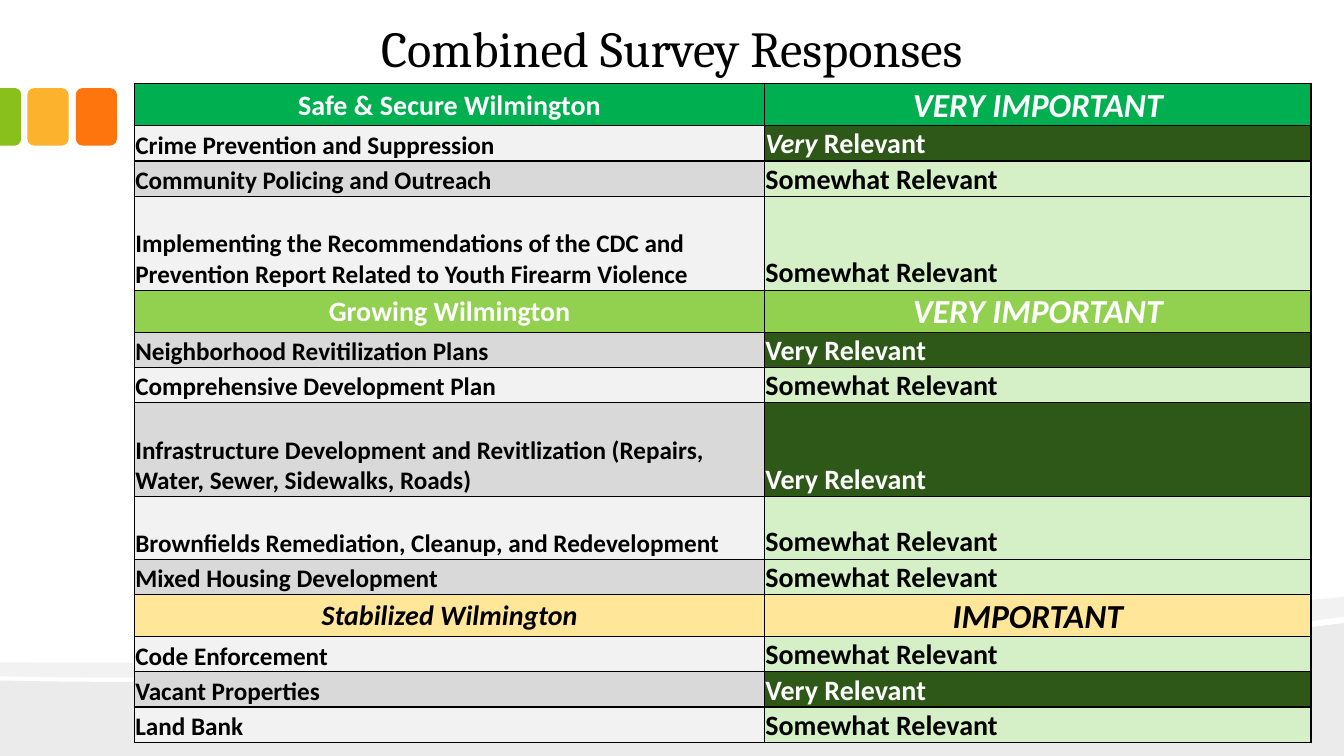
from pptx import Presentation
from pptx.dml.color import RGBColor
from pptx.enum.shapes import MSO_SHAPE
from pptx.enum.text import MSO_ANCHOR, PP_ALIGN
from pptx.oxml import parse_xml
from pptx.oxml.ns import nsdecls, qn
from pptx.util import Cm, Pt
from lxml.etree import SubElement

BLACK = RGBColor(0x00, 0x00, 0x00)
WHITE = RGBColor(0xFF, 0xFF, 0xFF)
GREEN = RGBColor(0x00, 0xB0, 0x50)
LIME = RGBColor(0x92, 0xD0, 0x50)
CREAM = RGBColor(0xFF, 0xE6, 0x99)
DARK_GREEN = RGBColor(0x2E, 0x58, 0x18)
PALE_GREEN = RGBColor(0xD5, 0xEF, 0xC6)
STRIPES = (RGBColor(0xF2, 0xF2, 0xF2), RGBColor(0xD9, 0xD9, 0xD9))
LEAF = RGBColor(0x89, 0xC0, 0x1C)
AMBER = RGBColor(0xFC, 0xB2, 0x2C)
ORANGE = RGBColor(0xFE, 0x75, 0x0E)

COLUMN_WIDTHS = (15.88, 13.77)
HEADING_HEIGHT, ITEM_HEIGHT = 0.86, 0.84
VERY = [("Very Relevant", False)]
VERY_STRESSED = [("Very ", True), ("Relevant", False)]
SOMEWHAT = [("Somewhat Relevant", False)]
RATING_COLORS = {"Very": (DARK_GREEN, WHITE), "Some": (PALE_GREEN, BLACK)}

SECTIONS = [
    ("Safe & Secure Wilmington", False, "VERY IMPORTANT", GREEN, WHITE, [
        ("Crime Prevention and Suppression", VERY_STRESSED, ITEM_HEIGHT),
        ("Community Policing and Outreach", SOMEWHAT, ITEM_HEIGHT),
        ("Implementing the Recommendations of the CDC and Prevention Report "
         "Related to Youth Firearm Violence", SOMEWHAT, 2.37),
    ]),
    ("Growing Wilmington", False, "VERY IMPORTANT", LIME, WHITE, [
        ("Neighborhood Revitilization Plans", VERY, ITEM_HEIGHT),
        ("Comprehensive Development Plan", SOMEWHAT, ITEM_HEIGHT),
        ("Infrastructure Development and Revitlization (Repairs, Water, "
         "Sewer, Sidewalks, Roads)", VERY, 2.37),
        ("Brownfields Remediation, Cleanup, and Redevelopment", SOMEWHAT, 1.58),
        ("Mixed Housing Development", SOMEWHAT, ITEM_HEIGHT),
    ]),
    ("Stabilized Wilmington", True, "IMPORTANT", CREAM, BLACK, [
        ("Code Enforcement", SOMEWHAT, ITEM_HEIGHT),
        ("Vacant Properties", VERY, ITEM_HEIGHT),
        ("Land Bank", SOMEWHAT, ITEM_HEIGHT),
    ]),
]

HILL = [[(33.87, 15.7)], [(33.87, 19.05)], [(0, 19.05)], [(0, 17.15)],
        [(8.94, 17.35), (26.47, 16.64), (33.87, 15.7)]]
RIBBON = [[(33.87, 15.04)], [(33.87, 15.54)],
          [(31.88, 15.82), (29.18, 16.08), (26.14, 16.28)],
          [(17.73, 16.84), (6.55, 17.2), (0, 17.04)], [(0, 16.69)],
          [(16.56, 16.81), (24.66, 15.93), (33.87, 15.04)]]


def apply_format(target, values):
    """Set every attribute named in a dict of format values."""
    for name, value in values.items():
        setattr(target, name, value)


def add_span(para, text, color, values):
    """Append one formatted run to a paragraph."""
    span = para.add_run()
    span.text = text
    apply_format(span.font, values)
    span.font.color.rgb = color


def paint(shape, color):
    """Give a shape a plain fill without line or shadow."""
    shape.shadow.inherit = False
    shape.fill.solid()
    shape.fill.fore_color.rgb = color
    shape.line.fill.background()


def bend(shape, segments):
    """Merge each run of three straight steps that forms a curve."""
    steps = iter(list(shape._element.iter(qn("a:lnTo"))))
    for segment in segments:
        first, *others = [next(steps) for _ in segment]
        if others:
            first.tag = qn("a:cubicBezTo")
            for step in others:
                first.append(step[0])
                step.getparent().remove(step)


def add_wave(page, outline, opacity):
    """Draw a translucent black wave along the foot of the page."""
    start, *rest = [(Cm(x), Cm(y)) for segment in outline for x, y in segment]
    builder = page.shapes.build_freeform(*start)
    builder.add_line_segments(rest, close=True)
    wave = builder.convert_to_shape()
    bend(wave, outline[1:])
    paint(wave, BLACK)
    color = wave.fill._xPr.find(qn("a:solidFill"))[0]
    SubElement(color, qn("a:alpha")).set("val", str(opacity * 1000))


def add_tabs(page):
    """Draw the three coloured tabs at the left edge."""
    edge = page.shapes.add_shape(MSO_SHAPE.ROUND_2_SAME_RECTANGLE,
                                 Cm(-0.46), Cm(2.68), Cm(1.45), Cm(0.53))
    edge.rotation = 90
    edge.adjustments[0] = 0.29
    paint(edge, LEAF)
    for place, color in enumerate((AMBER, ORANGE)):
        tab = page.shapes.add_shape(MSO_SHAPE.ROUNDED_RECTANGLE,
                                    Cm(0.69 + 1.22 * place), Cm(2.22),
                                    Cm(1.04), Cm(1.45))
        paint(tab, color)


def add_title(page, text):
    """Add the centred slide title."""
    box = page.shapes.add_textbox(Cm(3.39), Cm(0), Cm(27.08), Cm(2.12))
    apply_format(box.text_frame, {
        "word_wrap": True, "vertical_anchor": MSO_ANCHOR.BOTTOM,
        "margin_left": Cm(0.33), "margin_right": Cm(0.33),
        "margin_top": Cm(0.17), "margin_bottom": Cm(0.17)})
    para = box.text_frame.paragraphs[0]
    para.alignment = PP_ALIGN.CENTER
    add_span(para, text, BLACK, {"size": Pt(36), "name": "Cambria"})


def add_borders(cell):
    """Draw a thin black line on all four sides of a cell."""
    properties = cell._tc.get_or_add_tcPr()
    for place, side in enumerate("LRTB"):
        properties.insert(place, parse_xml(
            f'<a:ln{side} {nsdecls("a")} w="{Pt(1)}"><a:solidFill>'
            f'<a:srgbClr val="{BLACK}"/></a:solidFill></a:ln{side}>'))


def fill_cell(cell, spans, size, fill, ink, heading=False):
    """Write bold spans into a coloured, bordered cell."""
    apply_format(cell, {
        "margin_left": Cm(0.02), "margin_right": Cm(0.02),
        "margin_top": Cm(0.04), "margin_bottom": Cm(0),
        "vertical_anchor": MSO_ANCHOR.MIDDLE if heading else MSO_ANCHOR.BOTTOM})
    cell.fill.solid()
    cell.fill.fore_color.rgb = fill
    add_borders(cell)
    para = cell.text_frame.paragraphs[0]
    para.alignment = PP_ALIGN.CENTER if heading else PP_ALIGN.LEFT
    for text, italic in spans:
        add_span(para, text, ink, {"size": Pt(size), "name": "Calibri",
                                   "bold": True, "italic": italic})


def add_survey_table(page):
    """Add the table of survey sections and their ratings."""
    count = sum(1 + len(section[-1]) for section in SECTIONS)
    table = page.shapes.add_table(count, 2, Cm(3.39), Cm(2.11),
                                  Cm(sum(COLUMN_WIDTHS)), Cm(16.43)).table
    apply_format(table, {"first_row": False, "horz_banding": False})
    for column, width in zip(table.columns, COLUMN_WIDTHS):
        column.width = Cm(width)
    rows = iter(table.rows)
    item_number = 0
    for name, italic, importance, fill, ink, items in SECTIONS:
        row = next(rows)
        row.height = Cm(HEADING_HEIGHT)
        fill_cell(row.cells[0], [(name, italic)], 20, fill, ink, True)
        fill_cell(row.cells[1], [(importance, True)], 24, fill, ink, True)
        for item, rating, height in items:
            row = next(rows)
            row.height = Cm(height)
            stripe = STRIPES[item_number % 2]
            fill_cell(row.cells[0], [(item, False)], 18, stripe, BLACK)
            fill_cell(row.cells[1], rating, 20, *RATING_COLORS[rating[0][0][:4]])
            item_number += 1


def main():
    """Build the survey slide and save it."""
    deck = Presentation()
    apply_format(deck, {"slide_width": Cm(33.87), "slide_height": Cm(19.05)})
    page = deck.slides.add_slide(deck.slide_layouts[6])
    add_wave(page, HILL, 8)
    add_wave(page, RIBBON, 5)
    add_tabs(page)
    add_title(page, "Combined Survey Responses")
    add_survey_table(page)
    deck.save("out.pptx")


if __name__ == "__main__":
    main()
